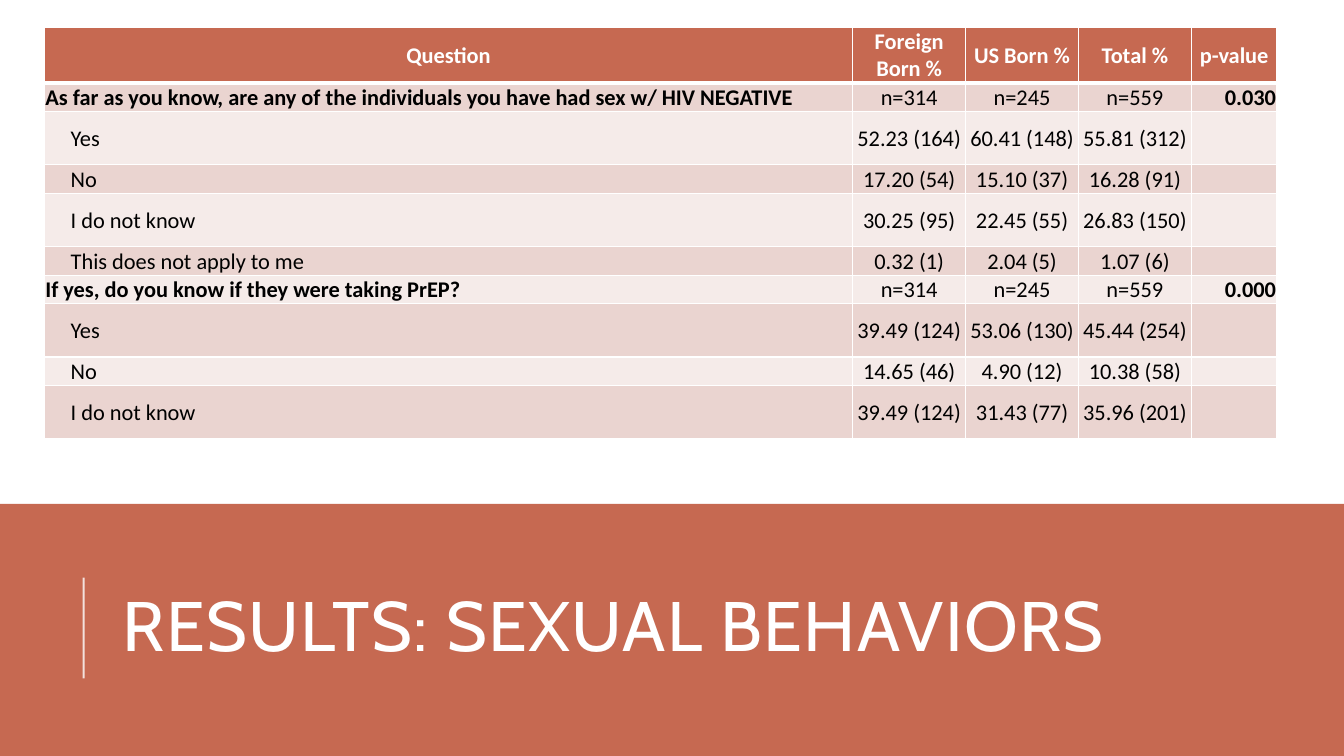
"""Build the survey results slide with its answer table and title band."""
import dataclasses
import typing

import lxml.etree
import pptx
import pptx.dml.color
import pptx.enum.shapes
import pptx.enum.text
import pptx.oxml.ns
import pptx.util

Pt = pptx.util.Pt
qn = pptx.oxml.ns.qn
Align = pptx.enum.text.PP_ALIGN


@dataclasses.dataclass(frozen=True)
class Theme:
    accent: str = "C66951"
    band_dark: str = "EAD4D0"
    band_light: str = "F5EBE9"
    white: str = "FFFFFF"
    black: str = "000000"
    title_font: str = "Cabin"
    table_font: str = "Calibri"
    title_size: int = 50
    table_size: int = 16


@dataclasses.dataclass(frozen=True)
class Row:
    label: str
    values: tuple[str, str, str]
    p_value: str = ""
    height: float = 20.3
    kind: str = "answer"


THEME = Theme()
TALL = 38.2
COUNTS = ("n=314", "n=245", "n=559")
COLUMN_WIDTHS = (577.44, 80.64, 80.64, 80.64, 61.2)
ROWS = (
    Row("Question", ("Foreign Born %", "US Born %", "Total %"), "p-value", TALL, "header"),
    Row("As far as you know, are any of the individuals you have had sex w/ HIV NEGATIVE",
        COUNTS, "0.030", kind="question"),
    Row("Yes", ("52.23 (164)", "60.41 (148)", "55.81 (312)"), height=TALL),
    Row("No", ("17.20 (54)", "15.10 (37)", "16.28 (91)")),
    Row("I do not know", ("30.25 (95)", "22.45 (55)", "26.83 (150)"), height=TALL),
    Row("This does not apply to me", ("0.32 (1)", "2.04 (5)", "1.07 (6)")),
    Row("If yes, do you know if they were taking PrEP?", COUNTS, "0.000", kind="question"),
    Row("Yes", ("39.49 (124)", "53.06 (130)", "45.44 (254)"), height=TALL),
    Row("No", ("14.65 (46)", "4.90 (12)", "10.38 (58)")),
    Row("I do not know", ("39.49 (124)", "31.43 (77)", "35.96 (201)"), height=TALL),
)


def rgb(value: str) -> pptx.dml.color.RGBColor:
    return pptx.dml.color.RGBColor.from_string(value)


def style_font(font: typing.Any, name: str, size: int, color: str, bold: bool = False) -> None:
    font.name = name
    font.size = Pt(size)
    font.bold = bold
    font.color.rgb = rgb(color)


def add_band(slide: typing.Any) -> None:
    band = slide.shapes.add_shape(
        pptx.enum.shapes.MSO_SHAPE.RECTANGLE, Pt(0), Pt(360), Pt(960), Pt(180))
    band.shadow.inherit = False
    band.fill.solid()
    band.fill.fore_color.rgb = rgb(THEME.accent)
    band.line.fill.background()


def place_title(slide: typing.Any, text: str) -> None:
    title = slide.shapes.title
    title.left, title.top, title.width, title.height = Pt(80.64), Pt(391.68), Pt(765.36), Pt(118.08)
    frame = title.text_frame
    frame.text = text
    frame.word_wrap = True
    frame.auto_size = pptx.enum.text.MSO_AUTO_SIZE.NONE
    frame.vertical_anchor = pptx.enum.text.MSO_ANCHOR.MIDDLE
    para = frame.paragraphs[0]
    para.alignment = Align.LEFT
    para.line_spacing = 0.8
    style_font(para.font, THEME.title_font, THEME.title_size, THEME.white)
    para._p.pPr.find(qn("a:defRPr")).set("spc", "100")
    slide.shapes._spTree.append(title._element)


def add_rule(slide: typing.Any) -> None:
    rule = slide.shapes.add_connector(
        pptx.enum.shapes.MSO_CONNECTOR.STRAIGHT, Pt(59.76), Pt(484.56), Pt(59.76), Pt(412.56))
    rule.line.width = Pt(1.5)
    rule.line.color.rgb = rgb(THEME.white)
    color = next(rule._element.iter(qn("a:srgbClr")))
    lxml.etree.SubElement(color, qn("a:alpha")).set("val", "80000")
    lxml.etree.SubElement(rule._element.spPr, qn("a:effectLst"))


def add_borders(cell: typing.Any, top: int, bottom: int) -> None:
    properties = cell._tc.get_or_add_tcPr()
    for side, width in (("L", 1), ("R", 1), ("T", top), ("B", bottom)):
        edge = lxml.etree.SubElement(properties, qn(f"a:ln{side}"))
        edge.set("w", str(Pt(width)))
        fill = lxml.etree.SubElement(edge, qn("a:solidFill"))
        lxml.etree.SubElement(fill, qn("a:srgbClr")).set("val", THEME.white)


def fill_cell(cell: typing.Any, row: Row, row_index: int, column: int, text: str) -> None:
    header = row.kind == "header"
    label = column == 0
    p_value = column == len(COLUMN_WIDTHS) - 1
    add_borders(cell, 3 if row_index == 1 else 1, 3 if header else 1)
    cell.fill.solid()
    band = THEME.band_dark if row_index % 2 else THEME.band_light
    cell.fill.fore_color.rgb = rgb(THEME.accent if header else band)
    cell.vertical_anchor = pptx.enum.text.MSO_ANCHOR.MIDDLE
    cell.margin_left = Pt(18.8 if label and row.kind == "answer" else 0.72)
    cell.margin_right = cell.margin_top = Pt(0.72)
    cell.margin_bottom = Pt(0)
    para = cell.text_frame.paragraphs[0]
    if header:
        para.alignment = Align.CENTER
    elif label:
        para.alignment = Align.LEFT
    else:
        para.alignment = Align.RIGHT if p_value else Align.CENTER
    bold = header or (row.kind == "question" and (label or p_value))
    style_font(para.font, THEME.table_font, THEME.table_size,
               THEME.white if header else THEME.black, bold)
    if text:
        para.add_run().text = text
    else:
        ending = lxml.etree.SubElement(para._p, qn("a:endParaRPr"))
        ending.set("sz", str(THEME.table_size * 100))


def add_results(slide: typing.Any) -> None:
    frame = slide.shapes.add_table(
        len(ROWS), len(COLUMN_WIDTHS), Pt(31.68), Pt(19.44),
        Pt(sum(COLUMN_WIDTHS)), Pt(sum(row.height for row in ROWS)))
    table = frame.table
    for column, width in zip(table.columns, COLUMN_WIDTHS):
        column.width = Pt(width)
    for row_index, row in enumerate(ROWS):
        table.rows[row_index].height = Pt(row.height)
        for column, text in enumerate((row.label, *row.values, row.p_value)):
            fill_cell(table.cell(row_index, column), row, row_index, column, text)


def main() -> None:
    deck = pptx.Presentation()
    deck.slide_width, deck.slide_height = Pt(960), Pt(540)
    slide = deck.slides.add_slide(deck.slide_layouts[5])
    add_band(slide)
    place_title(slide, "RESULTS: SEXUAL BEHAVIORS")
    add_rule(slide)
    add_results(slide)
    deck.save("out.pptx")


if __name__ == "__main__":
    main()
